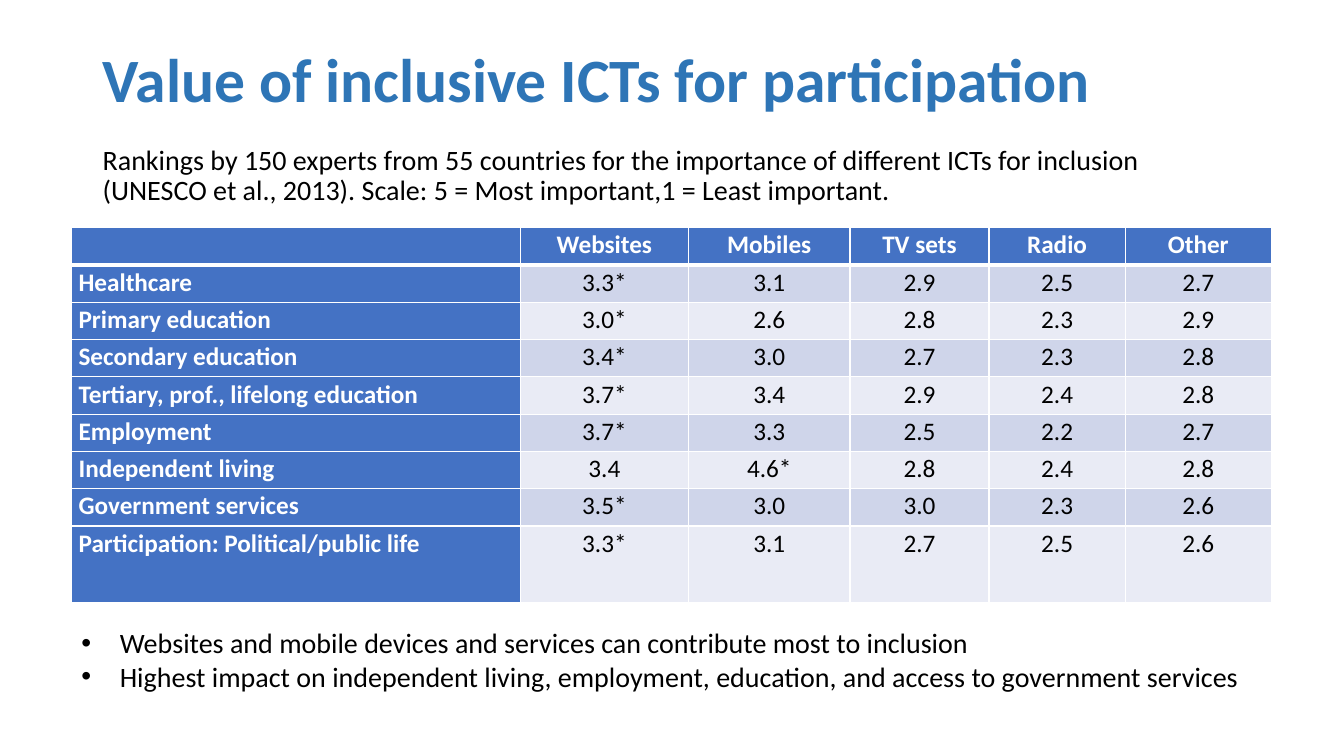
import pptx
import pptx.dml.color
import pptx.enum.text
import pptx.oxml
import pptx.oxml.ns
import pptx.util

PX = 9144  # EMU per px, 100 px to the inch
FONT = "Calibri"
COLORS = {
    "title": "2E75B6",
    "text": "000000",
    "white": "FFFFFF",
    "header": "4472C4",
    "band_dark": "CFD5EA",
    "band_light": "E9EBF5",
}
ANCHOR = pptx.enum.text.MSO_ANCHOR
ALIGN = pptx.enum.text.PP_ALIGN

MEDIA = ["", "Websites", "Mobiles", "TV sets", "Radio", "Other"]
RANKINGS = [
    ["Healthcare", "3.3*", "3.1", "2.9", "2.5", "2.7"],
    ["Primary education", "3.0*", "2.6", "2.8", "2.3", "2.9"],
    ["Secondary education", "3.4*", "3.0", "2.7", "2.3", "2.8"],
    ["Tertiary, prof., lifelong education", "3.7*", "3.4", "2.9", "2.4", "2.8"],
    ["Employment", "3.7*", "3.3", "2.5", "2.2", "2.7"],
    ["Independent living", "3.4", "4.6*", "2.8", "2.4", "2.8"],
    ["Government services", "3.5*", "3.0", "3.0", "2.3", "2.6"],
    ["Participation: Political/public life", "3.3*", "3.1", "2.7", "2.5", "2.6"],
]
COL_WIDTHS = [445, 167, 160, 138, 135, 145]
ROW_HEIGHTS = [37] * 8 + [76]


def px(n):
    return pptx.util.Emu(n * PX)


def rgb(name):
    return pptx.dml.color.RGBColor.from_string(COLORS[name])


def add_run(p, text, size, color, bold=False):
    r = p.add_run()
    r.text = text
    r.font.name = FONT
    r.font.size = pptx.util.Pt(size)
    r.font.bold = bold
    r.font.color.rgb = rgb(color)


def set_hanging(p, indent):
    pPr = p._p.get_or_add_pPr()
    pPr.set("marL", str(px(indent)))
    pPr.set("indent", str(px(-indent)))
    return pPr


def add_text(s, box, lines, size, color="text", bold=False, spacing=None,
             before=0, anchor=ANCHOR.TOP, bullet=None):
    tf = s.shapes.add_textbox(*map(px, box)).text_frame
    tf.word_wrap = True
    tf.vertical_anchor = anchor
    for i, line in enumerate(lines):
        p = tf.add_paragraph() if i else tf.paragraphs[0]
        p.line_spacing = spacing
        p.space_before = pptx.util.Pt(before)
        if bullet:
            pPr = set_hanging(p, 38)
            ns = pptx.oxml.ns.nsdecls("a")
            pPr.append(pptx.oxml.parse_xml(f'<a:buFont {ns} typeface="Arial"/>'))
            pPr.append(pptx.oxml.parse_xml(f'<a:buChar {ns} char="{bullet}"/>'))
        add_run(p, line, size, color, bold)


def set_borders(cell, top, bottom):
    tcPr = cell._tc.get_or_add_tcPr()
    for side, width in (("L", 1), ("R", 1), ("T", top), ("B", bottom)):
        tcPr.append(pptx.oxml.parse_xml(
            f'<a:ln{side} {pptx.oxml.ns.nsdecls("a")} w="{pptx.util.Pt(width)}">'
            f'<a:solidFill><a:srgbClr val="{COLORS["white"]}"/></a:solidFill>'
            f'</a:ln{side}>'))


def fill_cell(cell, text, row, col):
    heading = row == 0 or col == 0
    # A thick rule separates the header row from the rankings
    set_borders(cell, 3 if row == 1 else 1, 3 if row == 0 else 1)
    cell.fill.solid()
    band = "band_dark" if row % 2 else "band_light"
    cell.fill.fore_color.rgb = rgb("header" if heading else band)
    cell.margin_left = cell.margin_right = px(7)
    cell.margin_top = cell.margin_bottom = 0
    p = cell.text_frame.paragraphs[0]
    p.line_spacing = 1.07
    if col:
        p.alignment = ALIGN.CENTER
        set_hanging(p, 17)
    if text:
        add_run(p, text, 18, "white" if heading else "text", heading)


def add_rankings(s, left, top):
    rows = [MEDIA] + RANKINGS
    table = s.shapes.add_table(
        len(rows), len(MEDIA), px(left), px(top),
        px(sum(COL_WIDTHS)), px(sum(ROW_HEIGHTS))).table
    for column, width in zip(table.columns, COL_WIDTHS):
        column.width = px(width)
    for row, height in zip(table.rows, ROW_HEIGHTS):
        row.height = px(height)
    for i, values in enumerate(rows):
        for j, text in enumerate(values):
            fill_cell(table.cell(i, j), text, i, j)


def main():
    prs = pptx.Presentation()
    prs.slide_width, prs.slide_height = px(1333), px(750)
    s = prs.slides.add_slide(prs.slide_layouts[6])

    # Title and introduction
    add_text(s, (92, 9, 1150, 145), ["Value of inclusive ICTs for participation"],
             44, "title", bold=True, spacing=0.9, anchor=ANCHOR.MIDDLE)
    add_text(s, (92, 140, 1150, 476),
             ["Rankings by 150 experts from 55 countries for the importance of "
              "different ICTs for inclusion (UNESCO et al., 2013). "
              "Scale: 5 = Most important,1 = Least important."],
             20, spacing=0.9, before=10)

    # Table of rankings
    add_rankings(s, 71, 226)

    # Conclusions
    add_text(s, (71, 616, 1190, 77),
             ["Websites and mobile devices and services can contribute most to inclusion",
              "Highest impact on independent living, employment, education, "
              "and access to government services"],
             20, bullet="•")

    prs.save("out.pptx")


if __name__ == "__main__":
    main()
